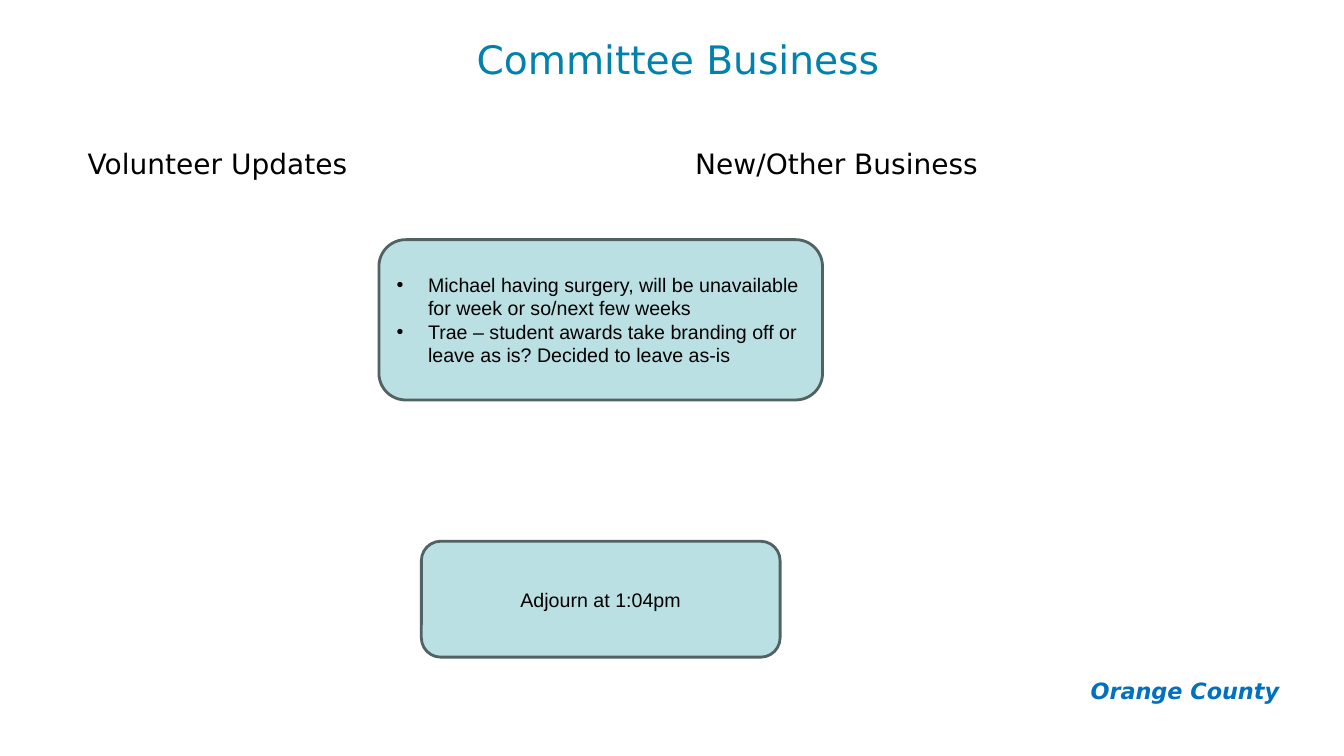
from dataclasses import dataclass

from lxml import etree
from pptx import Presentation, util as u
from pptx.dml.color import RGBColor
from pptx.enum import shapes, text
from pptx.oxml.ns import qn

HUES = {"title": "0182AC", "brand": "0070C0", "ink": "000000",
        "fill": "BBE0E3", "edge": "526263"}
SANS, ARIAL = "DejaVu Sans", "Arial"
LEFT, MID, RIGHT = text.PP_ALIGN.LEFT, text.PP_ALIGN.CENTER, text.PP_ALIGN.RIGHT
TOP, CENTRE = text.MSO_ANCHOR.TOP, text.MSO_ANCHOR.MIDDLE
INDENT = u.Cm(0.79)


@dataclass
class Area:
    """Place and size in centimetres."""
    left: float
    top: float
    width: float
    height: float

    def emu(self) -> list[int]:
        return [u.Cm(n) for n in (self.left, self.top, self.width, self.height)]


@dataclass
class Label:
    words: str
    area: Area


@dataclass
class Card:
    lines: list[str]
    area: Area
    bullet: bool = False


def hue(name: str) -> RGBColor:
    return RGBColor.from_string(HUES[name])


def add_bullet(para) -> None:
    props = para._p.get_or_add_pPr()
    props.set("marL", str(INDENT))
    props.set("indent", str(-INDENT))
    tint = etree.SubElement(props, qn("a:buClr"))
    etree.SubElement(tint, qn("a:srgbClr"), val=HUES["ink"])
    etree.SubElement(props, qn("a:buFont"), typeface=ARIAL)
    etree.SubElement(props, qn("a:buChar"), char="•")


def write(shape, lines: list[str], *, size: int, face: str = SANS,
          color: str = "ink", align=LEFT, anchor=TOP, pad: float = 0.13,
          bold: bool = False, italic: bool = False, bullet: bool = False) -> None:
    frame = shape.text_frame
    frame.word_wrap = True
    frame.auto_size = text.MSO_AUTO_SIZE.NONE
    frame.vertical_anchor = anchor
    frame.margin_left = frame.margin_right = u.Cm(0.25)
    frame.margin_top = frame.margin_bottom = u.Cm(pad)
    for i, line in enumerate(lines):
        para = frame.add_paragraph() if i else frame.paragraphs[0]
        para.alignment = align
        if bullet:
            add_bullet(para)
        run = para.add_run()
        run.text = line
        font = run.font
        font.name, font.size = face, u.Pt(size)
        font.bold, font.italic = bold, italic
        font.color.rgb = hue(color)


def draw_label(slide, label: Label, **style) -> None:
    box = slide.shapes.add_textbox(*label.area.emu())
    write(box, [label.words], **style)


def draw_card(slide, card: Card) -> None:
    box = slide.shapes.add_shape(shapes.MSO_SHAPE.ROUNDED_RECTANGLE,
                                 *card.area.emu())
    box.shadow.inherit = False
    box.fill.solid()
    box.fill.fore_color.rgb = hue("fill")
    box.line.color.rgb = hue("edge")
    box.line.width = u.Pt(2)
    write(box, card.lines, size=14, face=ARIAL, anchor=CENTRE,
          align=LEFT if card.bullet else MID, bullet=card.bullet)


def draw_title(slide, label: Label) -> None:
    title = slide.shapes.title
    title.left, title.top, title.width, title.height = label.area.emu()
    write(title, [label.words], size=28, color="title", align=MID)


HEADS = [
    Label("Volunteer Updates", Area(1.96, 3.56, 13.49, 2.08)),
    Label("New/Other Business", Area(17.27, 3.56, 13.49, 2.08)),
]
CARDS = [
    Card(["Michael having surgery, will be unavailable for week or so/next few weeks",
          "Trae – student awards take branding off or leave as is? Decided to leave as-is"],
         Area(9.55, 6.04, 11.18, 4.04), bullet=True),
    Card(["Adjourn at 1:04pm"], Area(10.62, 13.64, 9.04, 2.92)),
]


def main() -> None:
    deck = Presentation()
    deck.slide_width, deck.slide_height = u.Cm(33.87), u.Cm(19.05)
    slide = deck.slides.add_slide(deck.slide_layouts[5])
    draw_label(slide, Label("Orange County", Area(26.7, 16.81, 5.79, 1.19)),
               size=16, color="brand", align=RIGHT, pad=0.25,
               bold=True, italic=True)
    draw_title(slide, Label("Committee Business", Area(1.98, 0.76, 30.2, 3.18)))
    for head in HEADS:
        draw_label(slide, head, size=20)
    for card in CARDS:
        draw_card(slide, card)
    deck.save("out.pptx")


if __name__ == "__main__":
    main()
